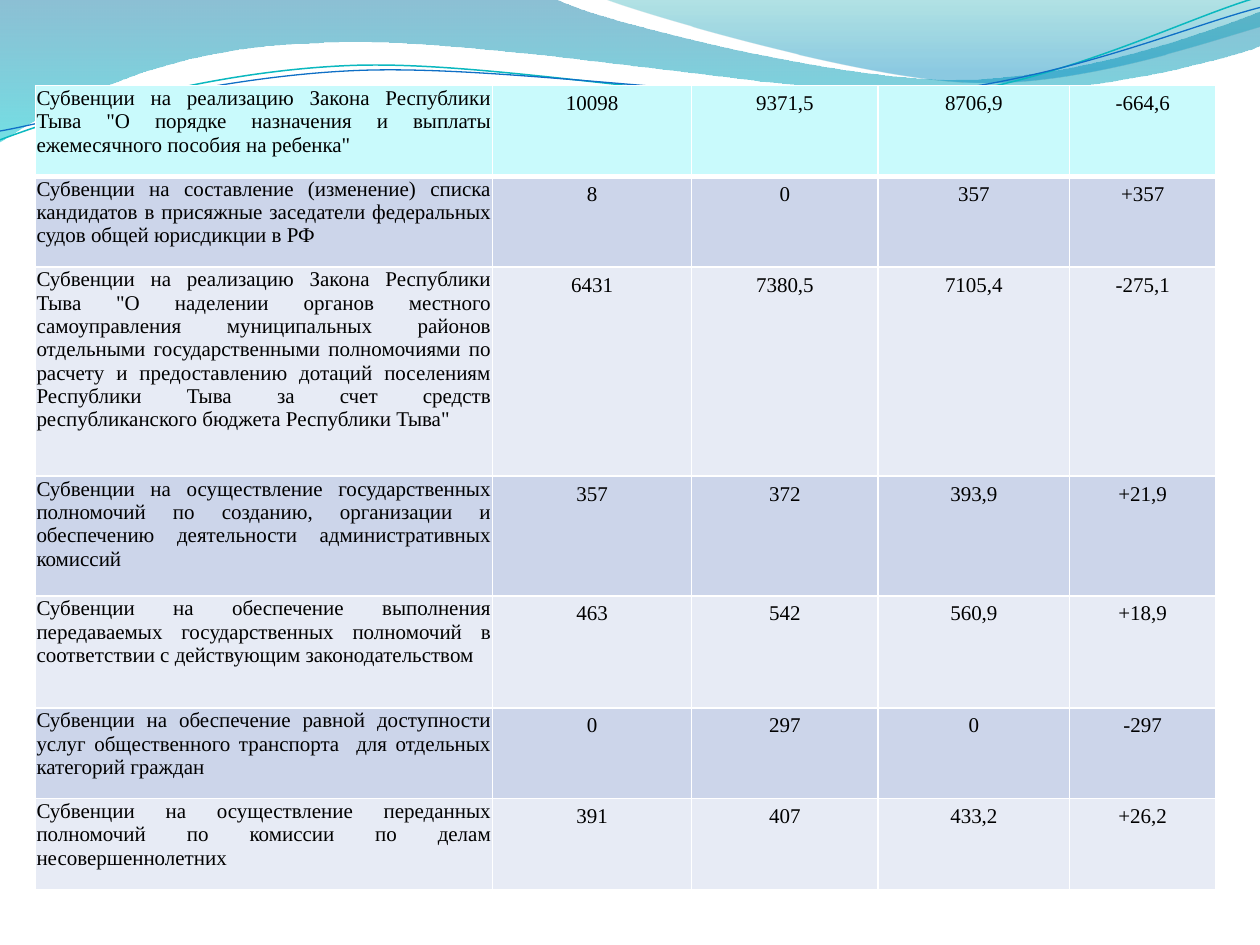
"""Build the slide of subvention figures under a wave header."""
from dataclasses import dataclass
from math import cos, radians, sin
from typing import Any

from lxml.etree import SubElement
from pptx import Presentation
from pptx.dml.color import RGBColor
from pptx.enum.text import PP_ALIGN
from pptx.oxml.ns import qn
from pptx.util import Inches, Pt

HUES = {
    "white": "FFFFFF", "black": "000000",
    "head": "C9FAFC", "dark": "CCD5EA", "light": "E7EBF5",
    "blue": "0074A1", "cyan": "00C6CF", "teal": "00A1A9", "sky": "008BBF",
    "aqua": "0AB8BF", "navy": "0F6FC6",
}
WAVES = [
    ([(0, 0), (4.4, -0.01), (4.76, 0.17, 6.64, 0.63, 7.58, 0.63),
      (8.53, 0.63, 9.58, 0.26, 10, 0.09), (10.01, 0.36),
      (9.83, 0.44, 8.7, 0.76, 7.46, 0.75), (6.22, 0.75, 3.82, 0.28, 2.57, 0.34),
      (1.29, 0.36, 0.46, 0.83, -0.01, 1.13)],
     [(0, "blue", 45), (1, "cyan", 55)]),
    ([(4.79, -0.01), (5.09, 0.11, 6.82, 0.62, 7.69, 0.65),
      (8.56, 0.69, 9.61, 0.32, 10, 0.21), (10, 0)],
     [(0, "teal", 30), (0.8, "sky", 45)]),
]
LINES = [
    ([(0, 1.11), (0.48, 0.93, 1.58, 0.57, 2.77, 0.52),
      (3.95, 0.47, 5.93, 0.89, 7.13, 0.8), (8.33, 0.71, 9.38, 0.15, 9.98, -0.02)],
     (4.99, 0.58), "aqua", 0.85),
    ([(0, 1.04), (0.47, 0.96, 1.64, 0.61, 2.83, 0.56),
      (4.03, 0.51, 5.97, 0.84, 7.17, 0.75), (8.36, 0.67, 9.41, 0.21, 10, 0.06)],
     (5, 0.59), "navy", 0.75),
]
TILT = 2.7
COLS = [3.63, 1.58, 1.48, 1.52, 1.16]
ROWS = [0.72, 0.72, 1.66, 0.95, 0.89, 0.72, 0.72]
DATA = [
    ('Субвенции на реализацию Закона Республики Тыва "О порядке назначения и '
     'выплаты ежемесячного пособия на ребенка"',
     "10098", "9371,5", "8706,9", "-664,6"),
    ("Субвенции на составление (изменение) списка кандидатов в присяжные "
     "заседатели федеральных судов общей юрисдикции в РФ",
     "8", "0", "357", "+357"),
    ('Субвенции на реализацию Закона Республики Тыва "О наделении органов '
     "местного самоуправления муниципальных районов отдельными государственными "
     "полномочиями по расчету и предоставлению дотаций поселениям Республики Тыва "
     'за счет средств республиканского бюджета Республики Тыва"',
     "6431", "7380,5", "7105,4", "-275,1"),
    ("Субвенции на осуществление государственных полномочий по созданию, "
     "организации и обеспечению деятельности административных комиссий",
     "357", "372", "393,9", "+21,9"),
    ("Субвенции на обеспечение выполнения передаваемых государственных полномочий "
     "в соответствии с действующим законодательством",
     "463", "542", "560,9", "+18,9"),
    ("Субвенции на обеспечение равной доступности услуг общественного транспорта  "
     "для отдельных категорий граждан",
     "0", "297", "0", "-297"),
    ("Субвенции на осуществление переданных полномочий по комиссии по делам "
     "несовершеннолетних",
     "391", "407", "433,2", "+26,2"),
]


def hue(name):
    return RGBColor.from_string(HUES[name])


def write(frame, text, font="Times New Roman", size=12, tint="black",
          align=PP_ALIGN.CENTER):
    part = frame.paragraphs[0]
    part.alignment = align
    run = part.add_run()
    run.text = text
    run.font.name, run.font.size = font, Pt(size)
    run.font.color.rgb = hue(tint)


def turn(dot, pivot, angle):
    dx, dy = dot[0] - pivot[0], dot[1] - pivot[1]
    c, s = cos(radians(angle)), sin(radians(angle))
    return pivot[0] + dx * c - dy * s, pivot[1] + dx * s + dy * c


@dataclass
class Deck:
    slide: Any
    unit: int = Inches(1)
    rule: str = "white"

    def size(self, count):
        return round(count * self.unit)

    def curve(self, nodes, close, pivot=(0, 0), angle=0):
        dots = [turn(node[i:i + 2], pivot, angle)
                for node in nodes for i in range(0, len(node), 2)]
        dots = [(self.size(x), self.size(y)) for x, y in dots]
        pen = self.slide.shapes.build_freeform(*dots[0], scale=1)
        pen.add_line_segments(dots[1:], close=close)
        shape = pen.convert_to_shape()
        shape.shadow.inherit = False
        shape.rotation = -angle
        legs = iter(list(shape.element.iter(qn("a:lnTo"))))
        for node in nodes[1:]:
            leg = next(legs)
            if len(node) == 6:
                leg.tag = qn("a:cubicBezTo")
                for extra in (next(legs), next(legs)):
                    leg.append(extra[0])
                    extra.getparent().remove(extra)
        return shape

    def wave(self, nodes, stops):
        shape = self.curve(nodes, True)
        shape.line.fill.background()
        shape.fill.gradient()
        shape.fill.gradient_angle = 270
        for stop, (place, name, _) in zip(shape.fill.gradient_stops, stops):
            stop.position, stop.color.rgb = place, hue(name)
        tints = shape.element.spPr.iter(qn("a:srgbClr"))
        for tint, (_, _, alpha) in zip(tints, stops):
            SubElement(tint, qn("a:alpha"), val=str(alpha * 1000))

    def line(self, nodes, pivot, name, width):
        shape = self.curve(nodes, False, pivot, TILT)
        shape.fill.background()
        shape.line.color.rgb, shape.line.width = hue(name), Pt(width)

    def edge(self, cell, **widths):
        props = cell._tc.get_or_add_tcPr()
        for side, width in widths.items():
            line = SubElement(props, qn(f"a:ln{side}"), w=str(Pt(width)))
            fill = SubElement(line, qn("a:solidFill"))
            SubElement(fill, qn("a:srgbClr"), val=HUES[self.rule])

    def cell(self, cell, text, fill, first, top, base):
        align = PP_ALIGN.CENTER
        if first:
            align = PP_ALIGN.JUSTIFY
            cell.margin_left = cell.margin_right = cell.margin_top = self.size(0.01)
            cell.margin_bottom = 0
        self.edge(cell, L=1, R=1, T=top, B=base)
        cell.fill.solid()
        cell.fill.fore_color.rgb = hue(fill)
        write(cell.text_frame, text, align=align)

    def table(self, left, top, cols, rows, data):
        box = [self.size(n) for n in (left, top, sum(cols), sum(rows))]
        table = self.slide.shapes.add_table(len(rows), len(cols), *box).table
        table.first_row = table.horz_banding = False
        for col, width in zip(table.columns, cols):
            col.width = self.size(width)
        for r, (row, height, texts) in enumerate(zip(table.rows, rows, data)):
            row.height = self.size(height)
            fill = "head" if r == 0 else ("light", "dark")[r % 2]
            for c, text in enumerate(texts):
                self.cell(table.cell(r, c), text, fill, c == 0,
                          3 if r == 1 else 1, 3 if r == 0 else 1)


def main():
    show = Presentation()
    show.slide_width, show.slide_height = Inches(10), Inches(7.5)
    deck = Deck(show.slides.add_slide(show.slide_layouts[6]))
    for wave in WAVES:
        deck.wave(*wave)
    for line in LINES:
        deck.line(*line)
    deck.table(0.28, 0.68, COLS, ROWS, DATA)
    show.save("out.pptx")


if __name__ == "__main__":
    main()
